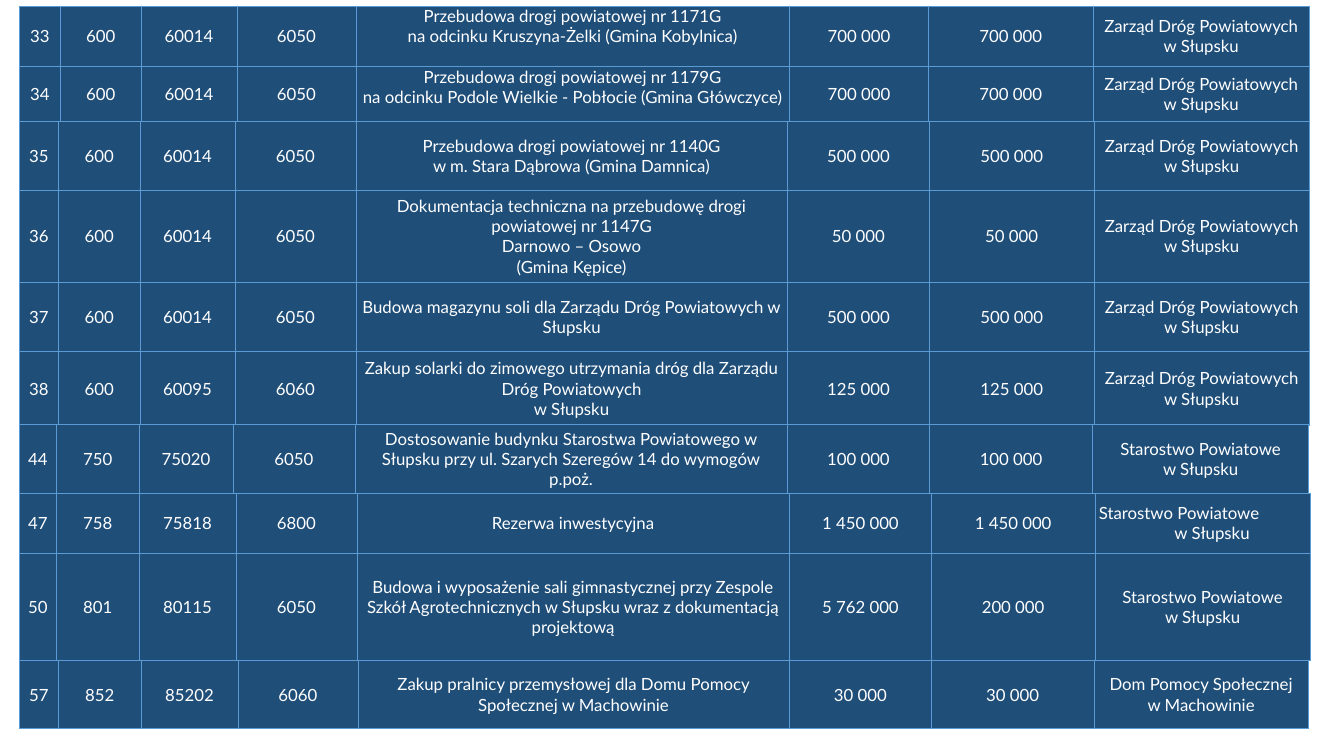
from lxml.etree import SubElement
from pptx import Presentation
from pptx.dml.color import RGBColor
from pptx.enum.text import MSO_ANCHOR, PP_ALIGN
from pptx.oxml.ns import qn
from pptx.util import Inches, Pt

SLIDE_WIDTH, SLIDE_HEIGHT = 13.33, 7.5
LEFT, TOP = 0.19, 0.06
NAVY, SKY, WHITE = "1F4E79", "5B9BD5", "FFFFFF"
ROADS = "Zarząd Dróg Powiatowych w Słupsku"
OFFICE = "Starostwo Powiatowe\vw Słupsku"
TASK_COLUMN, OWNER_COLUMN = 4, 7

ROAD_WORKS = [
    (0.6, "33", "600", "60014", "6050",
     "Przebudowa drogi powiatowej nr 1171G\vna odcinku Kruszyna-Żelki (Gmina Kobylnica)",
     "700 000", "700 000", ROADS),
    (0.54, "34", "600", "60014", "6050",
     "Przebudowa drogi powiatowej nr 1179G\vna odcinku Podole Wielkie - Pobłocie (Gmina Główczyce)",
     "700 000", "700 000", ROADS),
]
ROAD_UPKEEP = [
    (0.69, "35", "600", "60014", "6050",
     "Przebudowa drogi powiatowej nr 1140G\vw m. Stara Dąbrowa (Gmina Damnica)",
     "500 000", "500 000", ROADS),
    (0.91, "36", "600", "60014", "6050",
     "Dokumentacja techniczna na przebudowę drogi powiatowej nr 1147G\n"
     "Darnowo – Osowo\n(Gmina Kępice)",
     "50 000", "50 000", ROADS),
    (0.69, "37", "600", "60014", "6050",
     "Budowa magazynu soli dla Zarządu Dróg Powiatowych w Słupsku",
     "500 000", "500 000", ROADS),
    (0.73, "38", "600", "60095", "6060",
     "Zakup solarki do zimowego utrzymania dróg dla Zarządu Dróg Powiatowych\nw Słupsku",
     "125 000", "125 000", ROADS),
]
FIRE_SAFETY = [
    (0.68, "44", "750", "75020", "6050",
     "Dostosowanie budynku Starostwa Powiatowego w Słupsku przy ul. Szarych Szeregów 14 "
     "do wymogów p.poż.",
     "100 000", "100 000", OFFICE),
]
RESERVE_AND_SCHOOL = [
    (0.6, "47", "758", "75818", "6800", "Rezerwa inwestycyjna",
     "1 450 000", "1 450 000", "Starostwo Powiatowe\nw Słupsku"),
    (1.06, "50", "801", "80115", "6050",
     "Budowa i wyposażenie sali gimnastycznej przy Zespole Szkół Agrotechnicznych w Słupsku "
     "wraz z dokumentacją projektową",
     "5 762 000", "200 000", OFFICE),
]
CARE_HOME = [
    (0.68, "57", "852", "85202", "6060",
     "Zakup pralnicy przemysłowej dla Domu Pomocy Społecznej w Machowinie",
     "30 000", "30 000", "Dom Pomocy Społecznej\nw Machowinie"),
]


def color(hex_code):
    """Turn a hex string into a colour."""
    return RGBColor.from_string(hex_code)


def draw_borders(cell):
    """Outline a cell with thin sky-blue lines."""
    properties = cell._tc.get_or_add_tcPr()
    for position, side in enumerate("LRTB"):
        line = SubElement(properties, qn(f"a:ln{side}"), w=str(Pt(0.5)))
        SubElement(SubElement(line, qn("a:solidFill")), qn("a:srgbClr"), val=SKY)
        properties.insert(position, line)


def fill_cell(cell, wording, inset, anchor):
    """Write and format one cell."""
    cell.text_frame.text = wording
    cell.vertical_anchor = anchor
    cell.margin_left = cell.margin_right = Inches(inset)
    cell.margin_top = cell.margin_bottom = 0
    cell.fill.solid()
    cell.fill.fore_color.rgb = color(NAVY)
    draw_borders(cell)
    for paragraph in cell.text_frame.paragraphs:
        paragraph.alignment = PP_ALIGN.CENTER
        for run in paragraph.runs:
            run.font.size, run.font.name = Pt(12), "Lato"
            run.font.color.rgb = color(WHITE)


def add_investments(slide, top, columns, investments, inset=0.04, task_anchor=MSO_ANCHOR.MIDDLE):
    """Add one block of investments and return its table."""
    height = sum(investment[0] for investment in investments)
    table = slide.shapes.add_table(
        len(investments), len(columns), Inches(LEFT), Inches(top),
        Inches(sum(columns)), Inches(height)).table
    table.first_row = table.horz_banding = False
    for column, width in zip(table.columns, columns):
        column.width = Inches(width)
    for row, (row_height, *entries) in zip(table.rows, investments):
        row.height = Inches(row_height)
        for index, (cell, entry) in enumerate(zip(row.cells, entries)):
            anchor = task_anchor if index == TASK_COLUMN else MSO_ANCHOR.MIDDLE
            fill_cell(cell, entry, inset, anchor)
    return table


def stagger_owner(cell):
    """Set the owner flush left, with its second line indented."""
    for paragraph, indent in zip(cell.text_frame.paragraphs, (0, 0.75)):
        paragraph.alignment = PP_ALIGN.LEFT
        paragraph._p.get_or_add_pPr().set("marL", str(Inches(indent)))


def main():
    """Build the slide and save it."""
    deck = Presentation()
    deck.slide_width, deck.slide_height = Inches(SLIDE_WIDTH), Inches(SLIDE_HEIGHT)
    slide = deck.slides.add_slide(deck.slide_layouts[6])
    add_investments(slide, TOP, (0.41, 0.8, 0.95, 1.18, 4.3, 1.38, 1.63, 2.15),
                    ROAD_WORKS, task_anchor=MSO_ANCHOR.TOP)
    add_investments(slide, 1.2, (0.39, 0.81, 0.94, 1.2, 4.28, 1.41, 1.63, 2.14),
                    ROAD_UPKEEP, inset=0.05)
    add_investments(slide, 4.21, (0.37, 0.82, 0.93, 1.21, 4.29, 1.41, 1.62, 2.14), FIRE_SAFETY)
    reserve = add_investments(slide, 4.89, (0.37, 0.82, 0.96, 1.2, 4.29, 1.41, 1.62, 2.14),
                              RESERVE_AND_SCHOOL)
    stagger_owner(reserve.cell(0, OWNER_COLUMN))
    add_investments(slide, 6.55, (0.39, 0.82, 0.96, 1.19, 4.28, 1.41, 1.61, 2.13), CARE_HOME)
    deck.save("out.pptx")


if __name__ == "__main__":
    main()
